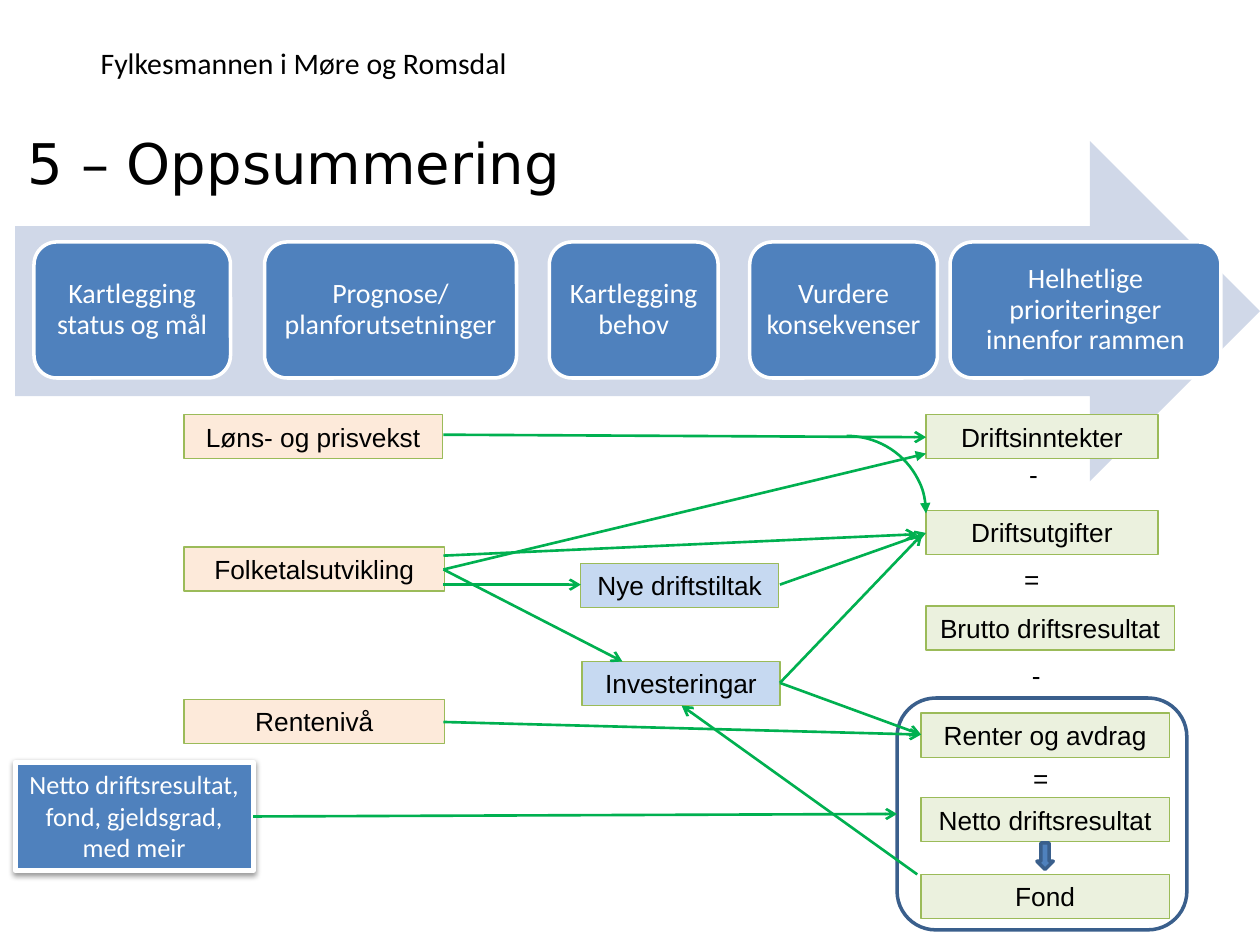
"""Build the summary slide with the planning process and its budget effects."""
from lxml.etree import SubElement
from pptx import Presentation
from pptx.dml.color import RGBColor
from pptx.enum.shapes import MSO_CONNECTOR, MSO_SHAPE
from pptx.enum.text import MSO_ANCHOR, PP_ALIGN
from pptx.oxml.ns import qn
from pptx.util import Inches, Pt

COLORS = {
    "black": "000000", "white": "FFFFFF", "band": "D0D8E8", "blue": "4F81BD",
    "navy": "3A5F8C", "olive": "9BBB59", "result": "EBF1DE",
    "driver": "FDEADA", "measure": "C6D9F1", "arrow": "00B050",
}
BODY = {"name": "Arial", "size": Pt(15)}
STEP = {"name": "Calibri", "size": Pt(16)}
GOAL = {"name": "Calibri", "size": Pt(15)}
HEADER = {"name": "Calibri", "size": Pt(17)}
TITLE = {"name": "DejaVu Sans", "size": Pt(32)}


def write(s, text, font, color="black", align=PP_ALIGN.CENTER, anchor=MSO_ANCHOR.TOP):
    tf = s.text_frame
    tf.word_wrap = True
    tf.vertical_anchor = anchor
    p = tf.paragraphs[0]
    p.alignment = align
    r = p.add_run()
    r.text = text
    for key, value in font.items():
        setattr(r.font, key, value)
    r.font.color.rgb = RGBColor.from_string(COLORS[color])
    return tf


def draw(kind, at, fill=None, line=None, width=0.75):
    s = slide.shapes.add_shape(kind, *map(Inches, at))
    s.shadow.inherit = False
    for target, color in ((s.fill, fill), (s.line.fill, line)):
        if color:
            target.solid()
            target.fore_color.rgb = RGBColor.from_string(COLORS[color])
        else:
            target.background()
    if line:
        s.line.width = Pt(width)
    return s


prs = Presentation()
prs.slide_width, prs.slide_height = Inches(10), Inches(7.5)
slide = prs.slides.add_slide(prs.slide_layouts[5])

title = slide.shapes.title
title.left, title.top, title.width, title.height = map(Inches, (0.12, 0.97, 9.88, 0.63))
write(title, "5 – Oppsummering", TITLE, align=PP_ALIGN.LEFT, anchor=MSO_ANCHOR.BOTTOM)

header = slide.shapes.add_textbox(*map(Inches, (0.7, 0.3, 3.75, 0.39)))
write(header, "Fylkesmannen i Møre og Romsdal", HEADER, align=PP_ALIGN.LEFT,
      anchor=MSO_ANCHOR.MIDDLE)

draw(MSO_SHAPE.RIGHT_ARROW, (0.12, 1.12, 9.88, 2.7), "band")
steps = [
    (0.27, 1.56, "Kartlegging status og mål"),
    (2.1, 2, "Prognose/ planforutsetninger"),
    (4.36, 1.34, "Kartlegging behov"),
    (5.95, 1.49, "Vurdere konsekvenser"),
    (7.54, 2.15, "Helhetlige prioriteringer innenfor rammen"),
]
for left, width, text in steps:
    s = draw(MSO_SHAPE.ROUNDED_RECTANGLE, (left, 1.92, width, 1.08), "blue", "white", 2)
    tf = write(s, text, STEP, "white", anchor=MSO_ANCHOR.MIDDLE)
    tf.paragraphs[0].line_spacing = 0.9
    for side in ("left", "top", "right", "bottom"):
        setattr(tf, f"margin_{side}", Inches(0.07))

draw(MSO_SHAPE.ROUNDED_RECTANGLE, (7.12, 5.54, 2.3, 1.84), line="navy", width=2)
boxes = [
    (7.35, 3.29, 1.84, "result", "Driftsinntekter"),
    (7.35, 4.05, 1.84, "result", "Driftsutgifter"),
    (7.35, 4.81, 1.97, "result", "Brutto driftsresultat"),
    (7.31, 5.66, 1.97, "result", "Renter og avdrag"),
    (7.31, 6.33, 1.97, "result", "Netto driftsresultat"),
    (7.31, 6.94, 1.97, "result", "Fond"),
    (1.46, 5.55, 2.07, "driver", "Rentenivå"),
    (1.46, 4.34, 2.07, "driver", "Folketalsutvikling"),
    (1.46, 3.29, 2.05, "driver", "Løns- og prisvekst"),
    (4.61, 4.47, 1.57, "measure", "Nye driftstiltak"),
    (4.62, 5.25, 1.57, "measure", "Investeringar"),
]
for left, top, width, fill, text in boxes:
    write(draw(MSO_SHAPE.RECTANGLE, (left, top, width, 0.35), fill, "olive"), text, BODY)

draw(MSO_SHAPE.DOWN_ARROW, (8.23, 6.69, 0.13, 0.21), "blue", "navy", 2)

goal = draw(MSO_SHAPE.RECTANGLE, (0.12, 6.05, 1.89, 0.86), "blue", "white", 3)
write(goal, "Netto driftsresultat, fond, gjeldsgrad, med meir", GOAL, "white")
shadow = SubElement(goal._element.spPr.find(qn("a:effectLst")), qn("a:outerShdw"),
                    blurRad=str(Pt(3.1)), dist=str(Pt(1.6)), dir="5400000", rotWithShape="0")
black = SubElement(shadow, qn("a:srgbClr"), val=COLORS["black"])
SubElement(black, qn("a:alpha"), val="38000")

for left, top, sign in [(8.07, 3.59, "-"), (8.03, 4.42, "="), (8.09, 5.18, "-"), (8.1, 6, "=")]:
    s = slide.shapes.add_textbox(*map(Inches, (left, top, 0.39, 0.35)))
    write(s, sign, BODY, align=PP_ALIGN.LEFT)

links = [
    (6.19, 4.64, 7.35, 4.23, "arrow"),
    (3.52, 4.52, 4.94, 5.25, "arrow"),
    (3.52, 4.64, 4.61, 4.64, "arrow"),
    (6.19, 5.42, 7.32, 4.24, "arrow"),
    (6.19, 5.42, 7.31, 5.83, "arrow"),
    (7.28, 6.94, 5.41, 5.6, "arrow"),
    (3.52, 4.41, 7.28, 4.24, "arrow"),
    (3.52, 3.45, 7.35, 3.47, "arrow"),
    (2.01, 6.48, 7.12, 6.46, "arrow"),
    (3.52, 5.73, 7.31, 5.83, "arrow"),
    (3.52, 4.52, 7.35, 3.6, "triangle"),
]
arc = draw(MSO_SHAPE.ARC, (6.09, 3.46, 1.26, 1.23), line="arrow", width=1.5)
tails = [(arc, "triangle")]
for x1, y1, x2, y2, head in links:
    s = slide.shapes.add_connector(MSO_CONNECTOR.STRAIGHT, *map(Inches, (x1, y1, x2, y2)))
    s.line.color.rgb = RGBColor.from_string(COLORS["arrow"])
    s.line.width = Pt(1.5)
    SubElement(s._element.spPr, qn("a:effectLst"))
    tails.append((s, head))
for s, head in tails:
    SubElement(s._element.spPr.find(qn("a:ln")), qn("a:tailEnd"), type=head)

prs.save("out.pptx")
